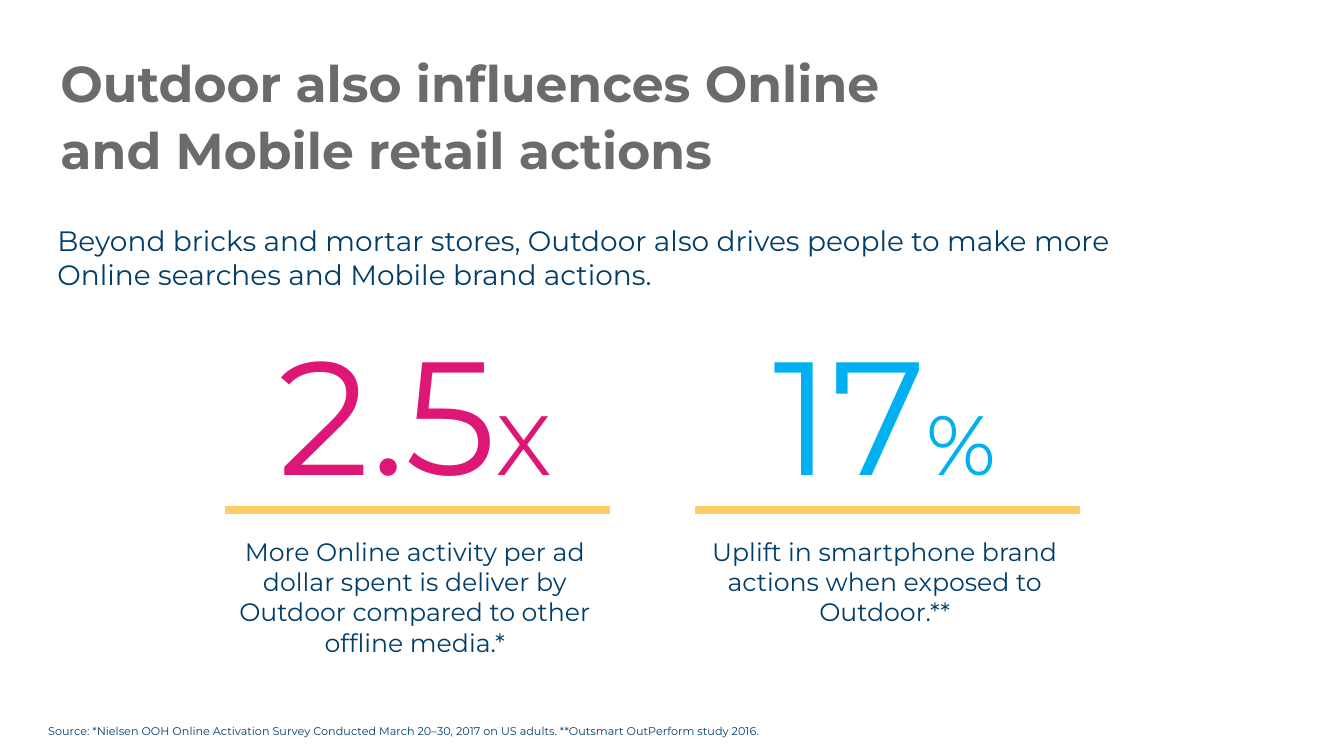
import dataclasses

import pptx
import pptx.dml.color
import pptx.enum.shapes
import pptx.enum.text
import pptx.oxml
import pptx.oxml.ns
import pptx.util

ALIGN = pptx.enum.text.PP_ALIGN
FIT = pptx.enum.text.MSO_AUTO_SIZE


@dataclasses.dataclass(frozen=True)
class Theme:
    font: str = "Montserrat"
    grey: str = "6C6B6A"
    navy: str = "003D69"
    pink: str = "DE1776"
    blue: str = "00B0F0"
    gold: str = "FFCC66"
    title: int = 36
    lead: int = 20
    body: int = 18
    note: int = 8
    huge: int = 115
    unit: int = 60
    rule: int = 6


class Deck:
    """Draws on one slide; lengths are percent of its width and height."""

    def __init__(self, theme):
        self.theme = theme
        self.file = pptx.Presentation()
        self.file.slide_width = pptx.util.Inches(13.33)
        self.file.slide_height = pptx.util.Inches(7.5)
        self.slide = self.file.slides.add_slide(self.file.slide_layouts[6])

    def across(self, share):
        return round(self.file.slide_width * share / 100)

    def down(self, share):
        return round(self.file.slide_height * share / 100)

    def text(self, box, runs, color, align=ALIGN.LEFT, home=None):
        """Add a text box; runs are (words, size) pairs."""
        left, top, width, height = box
        shapes = home or self.slide.shapes
        shape = shapes.add_textbox(self.across(left), self.down(top),
                                   self.across(width), self.down(height))
        frame = shape.text_frame
        frame.word_wrap = True
        frame.auto_size = FIT.SHAPE_TO_FIT_TEXT
        para = frame.paragraphs[0]
        para.alignment = align
        for words, size in runs:
            run = para.add_run()
            run.text = words
            run.font.name = self.theme.font
            run.font.size = pptx.util.Pt(size)
            run.font.color.rgb = pptx.dml.color.RGBColor.from_string(color)
        return frame

    def title(self, box, words):
        frame = self.text(box, [(words, self.theme.title)], self.theme.grey)
        frame.auto_size = FIT.NONE
        frame.margin_left = frame.margin_right = 0
        frame.margin_top = frame.margin_bottom = 0
        para = frame.paragraphs[0]
        para.line_spacing = 1.1
        para.runs[0].font.bold = True

    def rule(self, left, top, width, home):
        line = home.add_connector(
            pptx.enum.shapes.MSO_CONNECTOR.STRAIGHT,
            self.across(left), self.down(top),
            self.across(left + width), self.down(top))
        line.line.width = pptx.util.Pt(self.theme.rule)
        line.line.color.rgb = pptx.dml.color.RGBColor.from_string(self.theme.gold)
        props = line._element.spPr
        props.append(pptx.oxml.parse_xml(
            "<a:effectLst %s/>" % pptx.oxml.ns.nsdecls("a")))

    def stat(self, left, figure, unit, color, words, height):
        """Group a big figure, the rule under it and its caption."""
        theme, width, inset = self.theme, 29.03, 0.38
        home = self.slide.shapes.add_group_shape().shapes
        self.text((left, 70.27, width, height), [(words, theme.body)],
                  theme.navy, ALIGN.CENTER, home)
        self.text((left, 40.93, width, 27.2),
                  [(figure, theme.huge), (unit, theme.unit)],
                  color, ALIGN.CENTER, home)
        self.rule(left + inset, 67.47, width - inset, home)


def main():
    theme = Theme()
    deck = Deck(theme)
    deck.title((4.5, 6.13, 69.24, 8),
               "Outdoor also influences Online and Mobile retail actions")
    deck.text((2.85, 95.2, 95.42, 3.2),
              [("Source: *Nielsen OOH Online Activation Survey Conducted "
                "March 20–30, 2017 on US adults. "
                "**Outsmart OutPerform study 2016.", theme.note)], theme.navy)
    deck.text((3.53, 28.93, 83.87, 10.27),
              [("Beyond bricks and mortar stores, Outdoor also drives people "
                "to make more Online searches and Mobile brand actions.",
                theme.lead)], theme.navy)

    stats = [
        ("2.5", "X", theme.pink,
         "More Online activity per ad dollar spent is deliver by Outdoor "
         "compared to other offline media.*", 21.07),
        ("17", "%", theme.blue,
         "Uplift in smartphone brand actions when exposed to Outdoor.**", 17.07),
    ]
    first, step = 16.35, 34.96
    for index, stat in enumerate(stats):
        deck.stat(first + index * step, *stat)
    deck.file.save("out.pptx")


if __name__ == "__main__":
    main()
